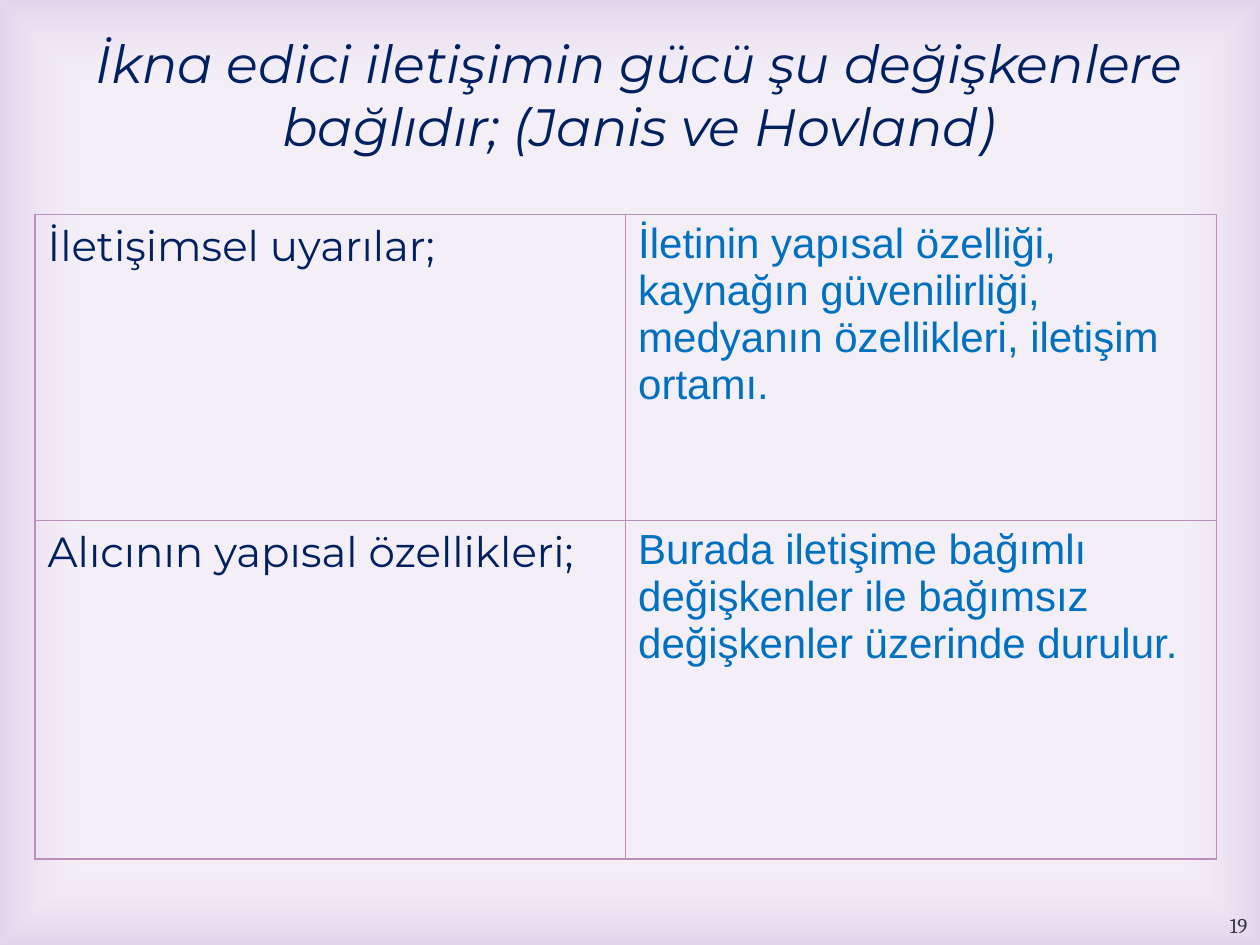
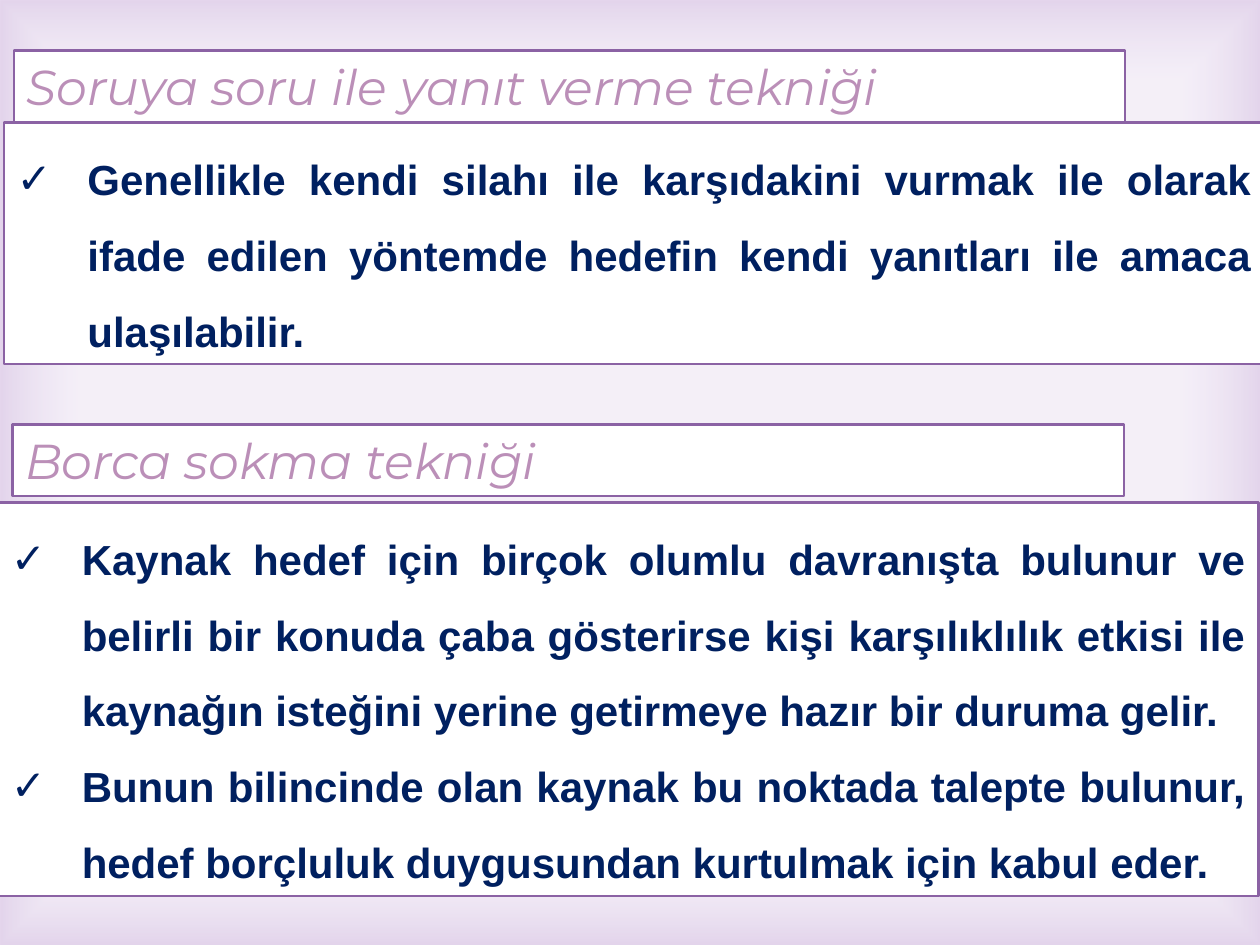
from dataclasses import dataclass

from lxml.etree import SubElement
from pptx import Presentation
from pptx.dml.color import RGBColor
from pptx.enum.shapes import MSO_SHAPE
from pptx.enum.text import MSO_ANCHOR, MSO_AUTO_SIZE, PP_ALIGN
from pptx.oxml import parse_xml
from pptx.oxml.ns import nsdecls, qn
from pptx.util import Pt


@dataclass(frozen=True)
class Theme:
    # Colours
    background: str = "F3EDF7"
    veil_centre: str = "FFFFFF"
    veil_edge: str = "AD82C6"
    panel: str = "FFFFFF"
    panel_line: str = "8B62A4"
    accent: str = "BB8FB8"
    navy: str = "002060"
    blue: str = "0070C0"
    number: str = "373545"
    # Fonts and type sizes
    display_font: str = "Montserrat"
    body_font: str = "Arial"
    number_font: str = "Cambria"
    title_size: int = 30
    heading_size: int = 28
    body_size: int = 24
    number_size: int = 12


TITLE_ONLY, TWO_CONTENT = 5, 3
WIDTH, HEIGHT = 720, 540


class Deck:
    def __init__(self, theme):
        self.theme = theme
        self.presentation = Presentation()
        self.presentation.slide_width = Pt(WIDTH)
        self.presentation.slide_height = Pt(HEIGHT)
        self.slide = None

    def add_slide(self, layout):
        layouts = self.presentation.slide_layouts
        self.slide = self.presentation.slides.add_slide(layouts[layout])

    def add_veil(self):
        """Put the background and its soft coloured edge on the master."""
        theme = self.theme
        master = self.presentation.slide_master
        master.background.fill.solid()
        master.background.fill.fore_color.rgb = RGBColor.from_string(theme.background)
        veil = self.slide.shapes.add_shape(
            MSO_SHAPE.RECTANGLE, 0, 0, Pt(WIDTH), Pt(HEIGHT))
        veil.shadow.inherit = False
        veil.line.fill.background()
        veil.fill.background()
        properties = veil.element.spPr
        stops = "".join(
            f'<a:gs pos="{position}000"><a:srgbClr val="{colour}">'
            f'<a:alpha val="{alpha}000"/></a:srgbClr></a:gs>'
            for position, colour, alpha in (
                (83, theme.veil_centre, 11), (100, theme.veil_edge, 23)))
        gradient = parse_xml(
            f'<a:gradFill {nsdecls("a")} rotWithShape="1"><a:gsLst>{stops}</a:gsLst>'
            '<a:path path="rect"><a:fillToRect l="50000" t="50000" r="50000" b="50000"/>'
            '</a:path></a:gradFill>')
        properties.replace(properties.find(qn("a:noFill")), gradient)
        master.shapes.element.insert(2, veil.element)

    def add_run(self, paragraph, text, font, size, colour, bold=False, italic=False):
        run = paragraph.add_run()
        run.text = text
        run.font.name = font
        run.font.size = Pt(size)
        run.font.color.rgb = RGBColor.from_string(colour)
        run.font.bold = bold
        run.font.italic = italic

    def place(self, shape, box, anchor=MSO_ANCHOR.TOP):
        shape.left, shape.top, shape.width, shape.height = (Pt(length) for length in box)
        frame = shape.text_frame
        frame.word_wrap = True
        frame.auto_size = MSO_AUTO_SIZE.NONE
        frame.vertical_anchor = anchor
        return frame

    def frame_panel(self, shape):
        shape.fill.solid()
        shape.fill.fore_color.rgb = RGBColor.from_string(self.theme.panel)
        shape.line.color.rgb = RGBColor.from_string(self.theme.panel_line)
        shape.line.width = Pt(1.5)

    def add_title(self, text, box):
        theme = self.theme
        paragraph = self.place(self.slide.shapes.title, box).paragraphs[0]
        paragraph.alignment = PP_ALIGN.CENTER
        self.add_run(paragraph, text, theme.display_font, theme.title_size,
                     theme.navy, italic=True)

    def add_heading(self, shape, text, box):
        theme = self.theme
        paragraph = self.place(shape, box).paragraphs[0]
        self.frame_panel(shape)
        paragraph.alignment = PP_ALIGN.LEFT
        self.add_run(paragraph, text, theme.display_font, theme.heading_size,
                     theme.accent, italic=True)

    def add_list(self, placeholder, items, box):
        theme = self.theme
        frame = self.place(placeholder, box)
        self.frame_panel(placeholder)
        for index, item in enumerate(items):
            paragraph = frame.add_paragraph() if index else frame.paragraphs[0]
            paragraph.alignment = PP_ALIGN.JUSTIFY
            paragraph.line_spacing = 1.5
            paragraph.space_before = Pt(0)
            self.add_run(paragraph, item, theme.body_font, theme.body_size,
                         theme.navy, bold=True)
            # Hanging check mark
            properties = paragraph._p.get_or_add_pPr()
            properties.set("marL", str(Pt(40.5)))
            properties.set("indent", str(-Pt(40.5)))
            SubElement(properties, qn("a:buFont"), typeface=theme.body_font)
            SubElement(properties, qn("a:buChar"), char="✓")

    def add_table(self, rows, box, heights):
        theme = self.theme
        styles = ((theme.display_font, theme.navy), (theme.body_font, theme.blue))
        lengths = (Pt(length) for length in box)
        table = self.slide.shapes.add_table(len(rows), len(styles), *lengths).table
        table.first_row = False
        table.horz_banding = False
        for row, height in zip(table.rows, heights):
            row.height = Pt(height)
        for row, texts in enumerate(rows):
            for column, (text, (font, colour)) in enumerate(zip(texts, styles)):
                cell = table.cell(row, column)
                self.add_borders(cell)
                cell.fill.background()
                self.add_run(cell.text_frame.paragraphs[0], text, font,
                             theme.body_size, colour)

    def add_borders(self, cell):
        properties = cell._tc.get_or_add_tcPr()
        for side in ("lnL", "lnR", "lnT", "lnB"):
            line = SubElement(properties, qn(f"a:{side}"), w=str(Pt(1)))
            fill = SubElement(line, qn("a:solidFill"))
            SubElement(fill, qn("a:srgbClr"), val=self.theme.accent)

    def add_number(self, number, box):
        theme = self.theme
        shape = self.slide.shapes.add_textbox(0, 0, 0, 0)
        paragraph = self.place(shape, box, MSO_ANCHOR.MIDDLE).paragraphs[0]
        paragraph.alignment = PP_ALIGN.RIGHT
        self.add_run(paragraph, number, theme.number_font, theme.number_size, theme.number)


def build_variables(deck):
    deck.add_slide(TITLE_ONLY)
    deck.add_veil()
    deck.add_number("19", (690, 517, 30, 23))
    deck.add_table(
        (("İletişimsel uyarılar;",
          "İletinin yapısal özelliği, kaynağın güvenilirliği, medyanın özellikleri, "
          "iletişim ortamı."),
         ("Alıcının yapısal özellikleri;",
          "Burada iletişime bağımlı değişkenler ile bağımsız değişkenler üzerinde "
          "durulur.")),
        (20, 122.5, 675, 368.5), (175, 193.5))
    deck.add_title(
        "İkna edici iletişimin gücü şu değişkenlere bağlıdır; (Janis ve Hovland)",
        (20, 14, 690.5, 80))


def build_techniques(deck):
    deck.add_slide(TWO_CONTENT)
    shapes = deck.slide.shapes
    first_list, second_list = list(deck.slide.placeholders)[1:]
    # Answering a question with a question
    deck.add_heading(shapes.title, "Soruya soru ile yanıt verme tekniği",
                     (8, 28.75, 635, 41))
    deck.add_list(
        first_list,
        ["Genellikle kendi silahı ile karşıdakini vurmak ile olarak ifade edilen "
         "yöntemde hedefin kendi yanıtları ile amaca ulaşılabilir."],
        (2.25, 70, WIDTH, 138))
    # Putting the target in debt
    deck.add_heading(shapes.add_textbox(0, 0, 0, 0), "Borca sokma tekniği",
                     (7.25, 242.5, 635, 41))
    deck.add_list(
        second_list,
        ["Kaynak hedef için birçok olumlu davranışta bulunur ve belirli bir konuda "
         "çaba gösterirse kişi karşılıklılık etkisi ile kaynağın isteğini yerine "
         "getirmeye hazır bir duruma gelir.",
         "Bunun bilincinde olan kaynak bu noktada talepte bulunur, hedef borçluluk "
         "duygusundan kurtulmak için kabul eder."],
        (-1, 287, WIDTH, 225))


def main():
    deck = Deck(Theme())
    build_variables(deck)
    build_techniques(deck)
    deck.presentation.save("out.pptx")


if __name__ == "__main__":
    main()
